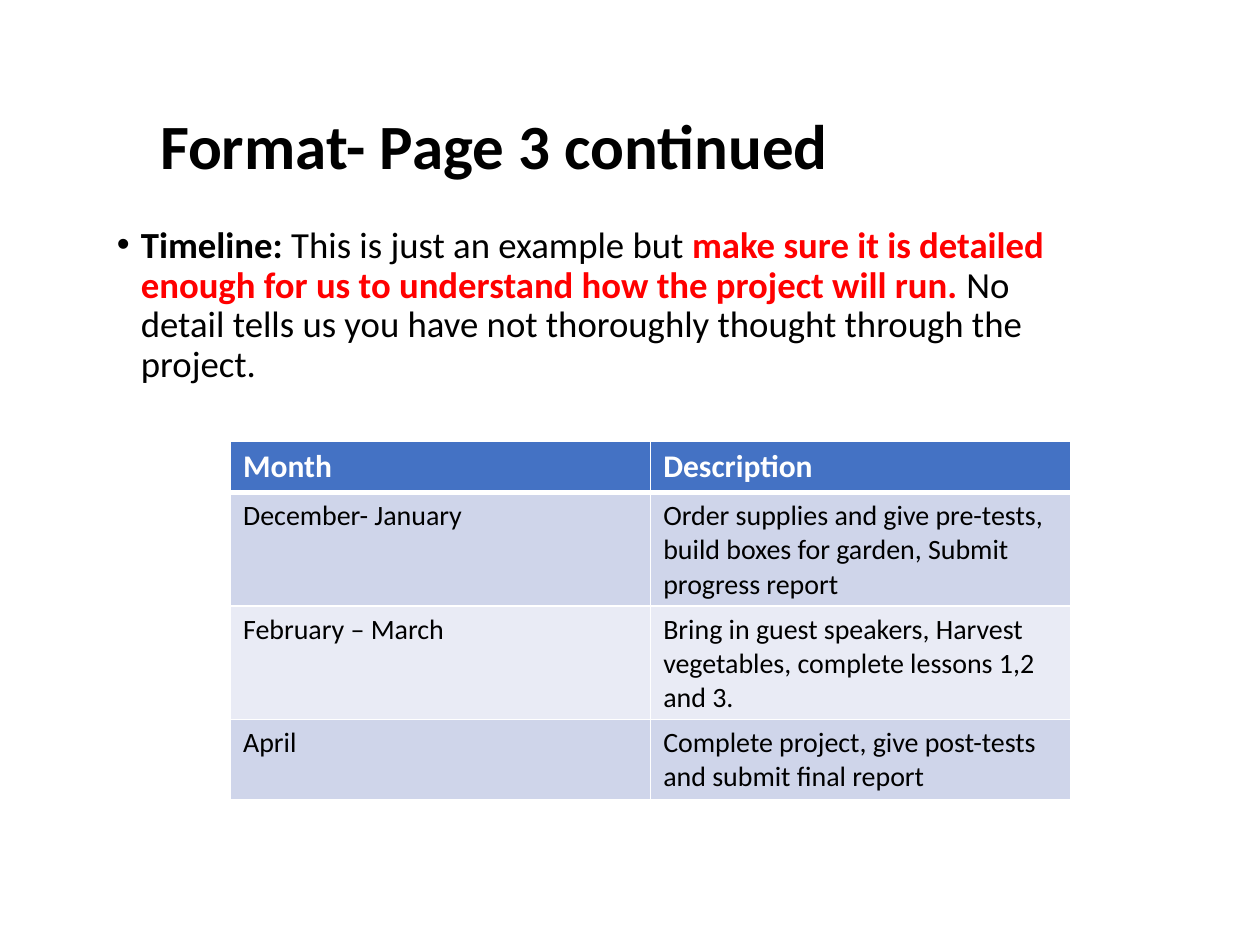
from lxml.etree import SubElement
from pptx import Presentation
from pptx.dml.color import RGBColor
from pptx.enum.text import MSO_ANCHOR as Anchor, PP_ALIGN as Align
from pptx.oxml import parse_xml
from pptx.oxml.ns import nsdecls, qn
from pptx.util import Inches, Pt

BLACK = RGBColor(0x00, 0x00, 0x00)
WHITE = RGBColor(0xFF, 0xFF, 0xFF)
RED = RGBColor(0xFF, 0x00, 0x00)
HEADER_BLUE = RGBColor(0x44, 0x72, 0xC4)
BAND_DARK = RGBColor(0xCF, 0xD5, 0xEA)
BAND_LIGHT = RGBColor(0xE9, 0xEB, 0xF5)

TITLE = "Format- Page 3 continued"
TIMELINE = [
    ("Timeline: ", BLACK, True),
    ("This is just an example but ", BLACK, False),
    ("make sure it is detailed enough for us to understand how the project will run. ", RED, True),
    ("No detail tells us you have not thoroughly thought through the project.", BLACK, False),
]
SCHEDULE = [
    ("Month", "Description"),
    ("December- January",
     "Order supplies and give pre-tests, build boxes for garden, Submit progress report"),
    ("February – March",
     "Bring in guest speakers, Harvest vegetables, complete lessons 1,2 and 3."),
    ("April", "Complete project, give post-tests and submit final report"),
]


def set_attributes(target, values):
    """Set each named value on the target."""
    for name, value in values.items():
        setattr(target, name, value)


def add_run(paragraph, text, size, color, bold):
    """Add a formatted run of text to a paragraph."""
    run = paragraph.add_run()
    run.text = text
    set_attributes(run.font, {"name": "Calibri", "size": Pt(size), "bold": bold})
    run.font.color.rgb = color


def add_title(slide, left, top, width, height):
    """Move and fill the title placeholder."""
    title = slide.shapes.title
    set_attributes(title, {"left": left, "top": top, "width": width, "height": height})
    set_attributes(title.text_frame, {"vertical_anchor": Anchor.MIDDLE, "word_wrap": True})
    paragraph = title.text_frame.paragraphs[0]
    set_attributes(paragraph, {"alignment": Align.LEFT, "line_spacing": 0.9})
    add_run(paragraph, TITLE, 36, BLACK, True)


def add_timeline(slide, left, top, width, height):
    """Add the bulleted explanation of the timeline."""
    frame = slide.shapes.add_textbox(left, top, width, height).text_frame
    frame.word_wrap = True
    paragraph = frame.paragraphs[0]
    set_attributes(paragraph, {"line_spacing": 0.9, "space_before": Pt(7.5)})
    properties = paragraph._p.get_or_add_pPr()
    indent = Inches(0.19)
    properties.set("marL", str(indent))
    properties.set("indent", str(-indent))
    SubElement(properties, qn("a:buFont")).set("typeface", "Arial")
    SubElement(properties, qn("a:buChar")).set("char", "•")
    for text, color, bold in TIMELINE:
        add_run(paragraph, text, 21, color, bold)


def set_borders(cell, widths):
    """Draw white cell borders, given widths in points by side."""
    properties = cell._tc.get_or_add_tcPr()
    for position, (side, width) in enumerate(widths.items()):
        properties.insert(position, parse_xml(
            f'<a:ln{side} {nsdecls("a")} w="{Pt(width)}"><a:solidFill>'
            f'<a:srgbClr val="{WHITE}"/></a:solidFill></a:ln{side}>'))


def add_schedule(slide, left, top, width, row_height):
    """Add the schedule table with a header and banded rows."""
    rows, columns = len(SCHEDULE), len(SCHEDULE[0])
    table = slide.shapes.add_table(
        rows, columns, left, top, width, row_height * rows).table
    for row, texts in enumerate(SCHEDULE):
        header = row == 0
        band = BAND_DARK if row % 2 else BAND_LIGHT
        for column, text in enumerate(texts):
            cell = table.cell(row, column)
            cell.fill.solid()
            cell.fill.fore_color.rgb = HEADER_BLUE if header else band
            set_borders(cell, {"L": 1, "R": 1, "T": 3 if row == 1 else 1,
                               "B": 3 if header else 1})
            add_run(cell.text_frame.paragraphs[0], text, 18 if header else 16,
                    WHITE if header else BLACK, header)


def main():
    """Build and save the slide."""
    presentation = Presentation()
    set_attributes(presentation, {"slide_width": Inches(10), "slide_height": Inches(7.5)})
    slide = presentation.slides.add_slide(presentation.slide_layouts.get_by_name("Title Only"))
    add_title(slide, Inches(1.17), Inches(0.83), Inches(7.68), Inches(0.71))
    add_timeline(slide, Inches(0.83), Inches(1.75), Inches(8), Inches(4.63))
    add_schedule(slide, Inches(1.83), Inches(3.5), Inches(6.67), Inches(0.41))
    presentation.save("out.pptx")


if __name__ == "__main__":
    main()
